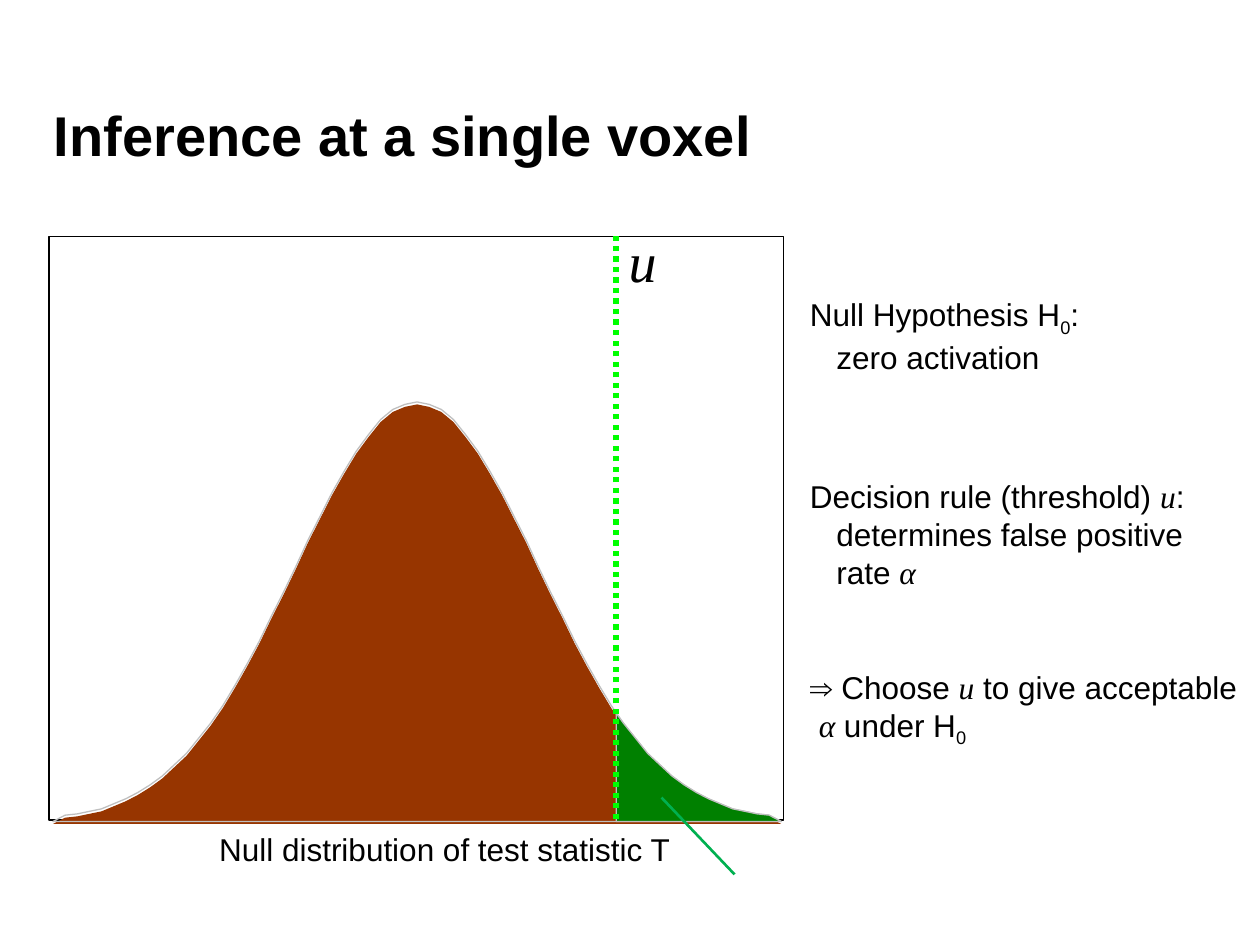
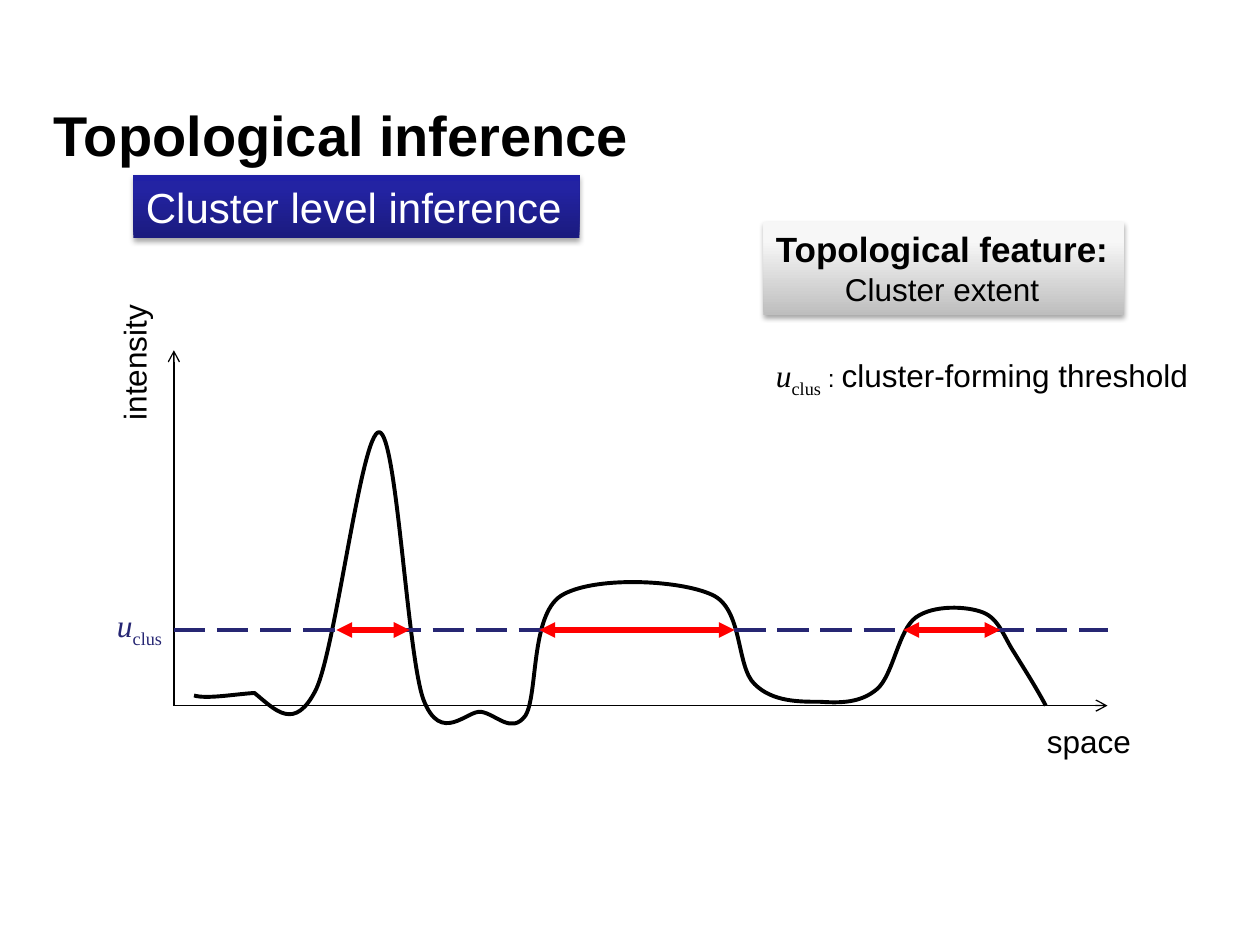
from lxml import etree
from pptx import Presentation
from pptx.dml.color import RGBColor
from pptx.enum.dml import MSO_LINE
from pptx.enum.shapes import MSO_CONNECTOR, MSO_SHAPE
from pptx.enum.text import MSO_ANCHOR, MSO_AUTO_SIZE, PP_ALIGN
from pptx.oxml import parse_xml
from pptx.oxml.ns import nsdecls, qn
from pptx.util import Inches, Pt

RECT, LINE = MSO_SHAPE.RECTANGLE, MSO_CONNECTOR.STRAIGHT
LEFT, MID = PP_ALIGN.LEFT, PP_ALIGN.CENTER
DOTS, DASH = MSO_LINE.ROUND_DOT, MSO_LINE.LONG_DASH
TOP, CENTRE = MSO_ANCHOR.TOP, MSO_ANCHOR.MIDDLE
GROW, FIXED = MSO_AUTO_SIZE.SHAPE_TO_FIT_TEXT, MSO_AUTO_SIZE.NONE
SANS, SERIF = "Arial", "Times New Roman"
BLACK, WHITE, NAVY, RED = "000000", "FFFFFF", "262673", "FF0000"
color = RGBColor.from_string


def write(shape, lines, size=18, ink=BLACK, align=LEFT):
    """Each line is (hang, runs); run flags: t serif, i italic, b bold, s subscript."""
    frame = shape.text_frame
    frame.word_wrap = False
    frame.auto_size = GROW
    frame.vertical_anchor = TOP
    for n, (hang, runs) in enumerate(lines):
        para = frame.paragraphs[0] if n == 0 else frame.add_paragraph()
        para.alignment = align
        if hang:
            props = para._p.get_or_add_pPr()
            props.set("marL", str(Inches(hang)))
            props.set("indent", str(-Inches(hang)))
        para.font.size, para.font.name = Pt(size), SANS
        para.font.color.rgb = color(ink)
        for text, flags in runs:
            if text == "\n":
                para.add_line_break()
                continue
            run = para.add_run()
            run.text = text
            if "t" in flags:
                run.font.name = SERIF
            if "i" in flags:
                run.font.italic = True
            if "b" in flags:
                run.font.bold = True
            if "s" in flags:
                run._r.get_or_add_rPr().set("baseline", "-25000")
    return frame


def rule(slide, x1, y1, x2, y2, ink, width, dash=None, head=None, tail=None):
    line = slide.shapes.add_connector(LINE, *map(Inches, (x1, y1, x2, y2)))
    line.line.color.rgb = color(ink)
    line.line.width = Pt(width)
    if dash:
        line.line.dash_style = dash
    for tag, kind in (("a:headEnd", head), ("a:tailEnd", tail)):
        if kind:
            etree.SubElement(line.line._get_or_add_ln(), qn(tag), type=kind)
    etree.SubElement(line._element.spPr, qn("a:effectLst"))


deck = Presentation()
deck.slide_width, deck.slide_height = Inches(10), Inches(7.5)

# Shared titles
slides = []
for title in ("Inference at a single voxel", "Topological inference"):
    slide = deck.slides.add_slide(deck.slide_layouts[6])
    box = slide.shapes.add_textbox(*map(Inches, (0.33, 0.63, 9, 0.87)))
    frame = write(box, [(0, [(title, "b")])], 32)
    frame.auto_size = FIXED
    frame.word_wrap, frame.vertical_anchor = True, CENTRE
    slides.append(slide)
voxel, topo = slides

# Slide 1: plot frame
plot = voxel.shapes.add_shape(RECT, *map(Inches, (0.39, 1.88, 5.83, 4.63)))
plot.shadow.inherit = False
plot.fill.solid()
plot.fill.fore_color.rgb = color(WHITE)
plot.line.color.rgb = color(BLACK)
plot.line.width = Pt(0.75)

# Symmetric bell and its tail beyond the threshold
rise = [0, 0.05, 0.06, 0.08, 0.1, 0.14, 0.18, 0.23, 0.29, 0.36, 0.45,
        0.54, 0.66, 0.78, 0.92, 1.08, 1.25, 1.43, 1.63, 1.82, 2.02,
        2.23, 2.42, 2.61, 2.78, 2.94, 3.07, 3.19, 3.27, 3.31, 3.33]
start, end, base, cut = 0.42, 6.2, 6.52, 4.89
high = rise + rise[-2::-1]
step = (end - start) / (len(high) - 1)
bell = [(start + n * step, base - h) for n, h in enumerate(high)]
tail = [(cut, base), (cut, 5.66)] + [p for p in bell if p[0] > cut + step / 2]
for points, drop, fill in ((bell, 0.02, "973500"), (bell, 0, None),
                           (tail, 0, "008000"), (tail, 0, None)):
    spots = [(Inches(x), Inches(y + drop)) for x, y in points]
    build = voxel.shapes.build_freeform(*spots[0])
    build.add_line_segments(spots[1:], close=True)
    area = build.convert_to_shape()
    area.shadow.inherit = False
    if fill:
        area.fill.solid()
        area.fill.fore_color.rgb = color(fill)
        area.line.fill.background()
    else:
        area.fill.background()
        area.line.color.rgb = color("BFBFBF")
        area.line.width = Pt(0)

# Caption, threshold and pointer
note = voxel.shapes.add_textbox(*map(Inches, (1.64, 6.54, 3.82, 0.4)))
write(note, [(0, [("Null distribution of test statistic T", "")])])
rule(voxel, cut, 6.5, cut, 1.87, "00FF00", 3, DOTS)
mark = voxel.shapes.add_textbox(*map(Inches, (4.5, 1.75, 1.2, 0.64)))
write(mark, [(0, [("u", "ti")])], 32, align=MID).word_wrap = True
rule(voxel, 5.25, 6.33, 5.83, 6.94, "00B050", 1.5)

# Notes on the right
split = ("\n", "")
notes = [
    (3.74, 3.26, 1.01, 0.21, [
        ("Decision rule (threshold) ", ""), ("u", "ti"), (":", ""), split,
        ("determines false positive", ""), split, ("rate ", ""), ("α", "ti")]),
    (2.29, 2.44, 0.71, 0.21, [
        ("Null Hypothesis H", ""), ("0", "s"), (":", ""), split,
        ("zero activation", "")]),
    (5.25, 3.7, 0.71, 0.07, [
        ("⇒ Choose ", ""), ("u", "ti"), (" to give acceptable", ""), split,
        ("α", "ti"), (" under H", ""), ("0", "s")]),
]
for y, wide, tall, hang, runs in notes:
    box = voxel.shapes.add_textbox(*map(Inches, (6.33, y, wide, tall)))
    write(box, [(hang, runs)])

# Slide 2: signal, as cubic curves (two handles and an end each)
first = (1.54, 5.52)
curves = [
    (1.64, 5.55, 1.86, 5.51, 2.02, 5.5), (2.19, 5.64, 2.34, 5.81, 2.51, 5.47),
    (2.67, 5.12, 2.87, 3.42, 3.01, 3.43), (3.15, 3.44, 3.23, 5.18, 3.36, 5.55),
    (3.5, 5.92, 3.71, 5.63, 3.82, 5.65), (3.94, 5.67, 4.06, 5.83, 4.17, 5.68),
    (4.27, 5.52, 4.21, 4.89, 4.45, 4.73), (4.7, 4.57, 5.39, 4.6, 5.65, 4.72),
    (5.9, 4.83, 5.84, 5.29, 5.99, 5.43), (6.13, 5.57, 6.34, 5.57, 6.51, 5.57),
    (6.67, 5.58, 6.83, 5.58, 6.96, 5.47), (7.09, 5.36, 7.13, 5, 7.27, 4.9),
    (7.41, 4.8, 7.67, 4.81, 7.8, 4.86), (7.93, 4.91, 7.97, 5.06, 8.05, 5.18),
    (8.13, 5.31, 8.22, 5.45, 8.3, 5.6),
]
build = topo.shapes.build_freeform(*map(Inches, first))
build.add_line_segments([tuple(map(Inches, c[4:])) for c in curves], close=False)
wave = build.convert_to_shape()
for seg, curve in zip(list(wave._element.iter(qn("a:lnTo"))), curves):
    bend = etree.Element(qn("a:cubicBezTo"))
    for x, y in zip(curve[::2], curve[1::2]):
        etree.SubElement(bend, qn("a:pt"), x=str(Inches(x) - wave.left),
                         y=str(Inches(y) - wave.top))
    seg.getparent().replace(seg, bend)
wave.shadow.inherit = False
wave.fill.background()
wave.line.color.rgb = color(BLACK)
wave.line.width = Pt(2.25)

# Axes, threshold and cluster extents
left, right, floor, level = 1.38, 8.79, 5.6, 5
rule(topo, left, floor, right, floor, BLACK, 0.75, tail="arrow")
rule(topo, left, floor, left, 2.78, BLACK, 0.75, tail="arrow")
rule(topo, left, level, right, level, NAVY, 2.25, DASH)
for x1, x2 in ((2.67, 3.25), (4.28, 5.83), (7.17, 7.94)):
    rule(topo, x1, level, x2, level, RED, 3, head="triangle", tail="triangle")

# Labels
clus = [("u", "ti"), ("clus", "ts")]
labels = [
    (8.21, 5.68, 0.88, 0.4, [("space", "")], BLACK, 0),
    (0.5, 2.67, 1.13, 0.4, [("intensity", "")], BLACK, 270),
    (0.83, 4.76, 0.6, 0.4, clus, NAVY, 0),
    (6.06, 2.78, 3.54, 0.4,
     clus + [(" : ", ""), ("cluster-forming threshold", "")], BLACK, 0),
]
for *place, runs, ink, turn in labels:
    box = topo.shapes.add_textbox(*map(Inches, place))
    box.rotation = turn
    frame = write(box, [(0, runs)], ink=ink)
frame.paragraphs[0].runs[2].font.size = Pt(14)

# Shaded banners
banners = [
    (6.06, 1.76, 2.86, 0.74, ("BEBEBE", "F7F7F7", "F8F8F8"), BLACK, 20,
     [(0, [("Topological feature:", "b")]), (0, [("Cluster extent", "")])]),
    (1.06, 1.39, 3.54, 0.5, ("1B1B7E", "2323A3", "2020A6"), WHITE, 24,
     [(0, [("Cluster level inference", "")])]),
]
for *place, shades, ink, size, lines in banners:
    box = topo.shapes.add_shape(RECT, *map(Inches, place))
    box.line.fill.background()
    box.fill.solid()
    stops = "".join(f'<a:gs pos="{pos}000"><a:srgbClr val="{shade}"/></a:gs>'
                    for pos, shade in zip((0, 80, 100), shades))
    props = box._element.spPr
    props.replace(props.find(qn("a:solidFill")), parse_xml(
        f'<a:gradFill {nsdecls("a")} rotWithShape="1"><a:gsLst>{stops}</a:gsLst>'
        '<a:lin ang="16200000" scaled="0"/></a:gradFill>'))
    box.shadow.inherit = False
    props.find(qn("a:effectLst")).append(parse_xml(
        f'<a:outerShdw {nsdecls("a")} blurRad="{Pt(3.1)}" dist="{Pt(1.8)}" '
        'dir="5400000" rotWithShape="0"><a:srgbClr val="000000">'
        '<a:alpha val="35000"/></a:srgbClr></a:outerShdw>'))
    frame = write(box, lines, size, ink)
    for para in frame.paragraphs[1:]:
        para.alignment, para.font.size = MID, Pt(18)

deck.save("out.pptx")
